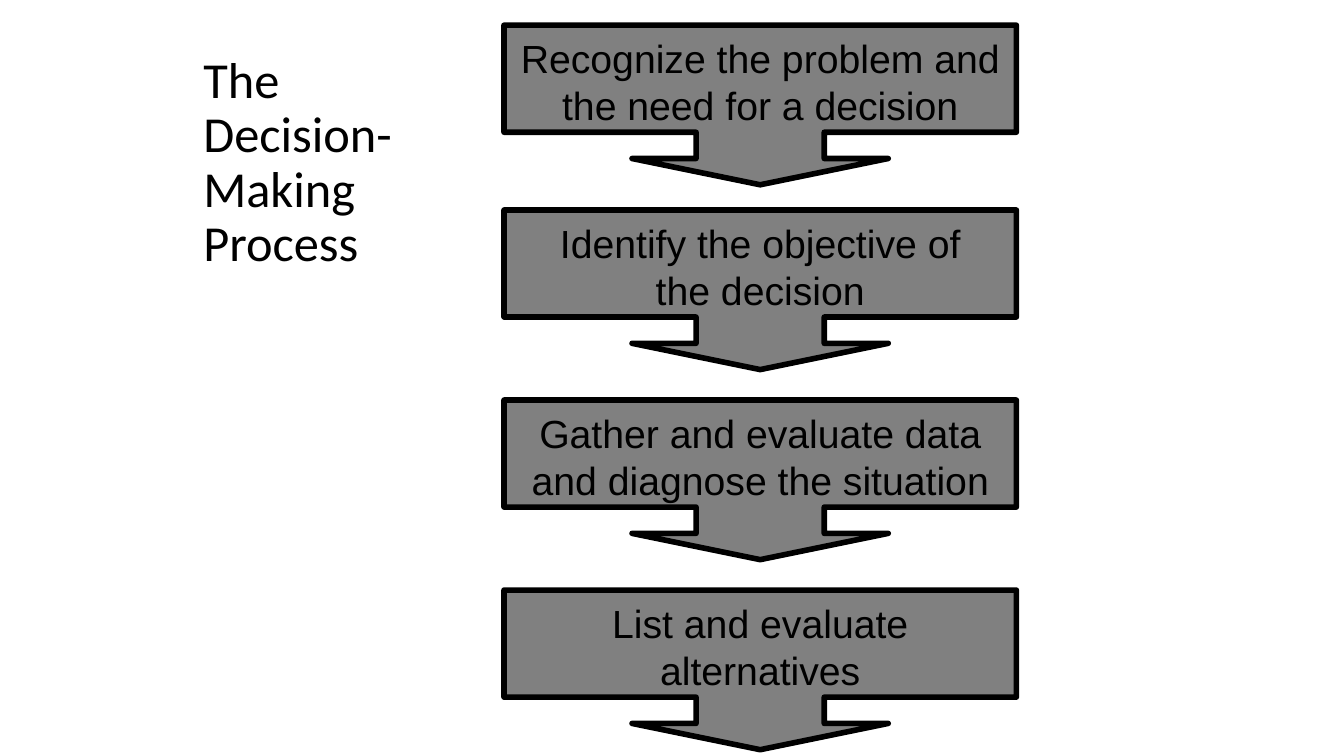
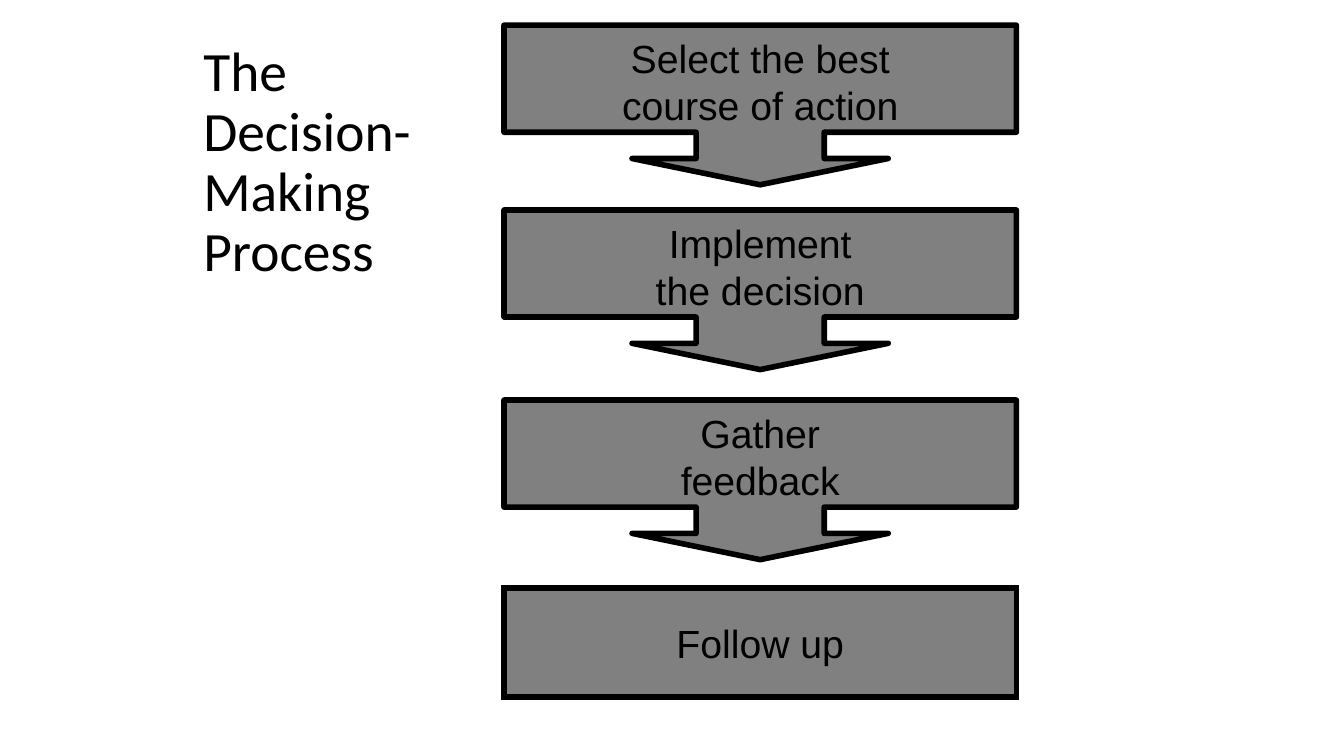
import dataclasses

import lxml.etree
import pptx
import pptx.dml.color
import pptx.enum.shapes
import pptx.enum.text
import pptx.oxml.ns
import pptx.util

EMU_PER_PX = 9525


@dataclasses.dataclass(frozen=True)
class Theme:
    ink: pptx.dml.color.RGBColor = pptx.dml.color.RGBColor(0x00, 0x00, 0x00)
    step_fill: pptx.dml.color.RGBColor = pptx.dml.color.RGBColor(0x80, 0x80, 0x80)
    title_font: str = "Calibri"
    step_font: str = "Arial"
    step_size: float = 28
    outline: float = 4


THEME = Theme()

TITLE = "The\vDecision-\vMaking\vProcess"
STEP_LEFT = 480
STEP_WIDTH = 488
CALLOUT_TOPS = (24, 200, 381, 562)
CALLOUT_HEIGHT = 152
BOX_HEIGHT = 102
SHAFT_WIDTH = 122
HEAD_WIDTH = 244
HEAD_LENGTH = 25
FINAL_TOP = 560
FINAL_HEIGHT = 104

FIRST_STEPS = (
    "Recognize the problem and\nthe need for a decision",
    "Identify the objective of\nthe decision",
    "Gather and evaluate data\nand diagnose the situation",
    "List and evaluate\nalternatives",
)
LATER_STEPS = (
    "Select the best\ncourse of action",
    "Implement\nthe decision",
    "Gather\nfeedback",
)
FINAL_STEP = "Follow up"


def px(length):
    return pptx.util.Emu(length * EMU_PER_PX)


def style_text(frame, font_name, size, alignment):
    frame.vertical_anchor = pptx.enum.text.MSO_ANCHOR.MIDDLE
    for paragraph in frame.paragraphs:
        paragraph.alignment = alignment
        for run in paragraph.runs:
            run.font.name = font_name
            run.font.size = pptx.util.Pt(size)
            run.font.color.rgb = THEME.ink


def add_titled_slide(deck, title_size):
    slide = deck.slides.add_slide(deck.slide_layouts[5])
    title = slide.shapes.title
    title.left, title.top, title.width, title.height = map(px, (184, 96, 816, 120))
    frame = title.text_frame
    frame.text = TITLE
    frame.word_wrap = True
    frame.auto_size = pptx.enum.text.MSO_AUTO_SIZE.NONE
    style_text(frame, THEME.title_font, title_size, pptx.enum.text.PP_ALIGN.LEFT)
    frame.paragraphs[0].line_spacing = 0.9
    return slide


def add_step(slide, preset, top, height, label):
    step = slide.shapes.add_shape(
        preset, px(STEP_LEFT), px(top), px(STEP_WIDTH), px(height)
    )
    step.shadow.inherit = False
    step.fill.solid()
    step.fill.fore_color.rgb = THEME.step_fill
    step.line.color.rgb = THEME.ink
    step.line.width = pptx.util.Pt(THEME.outline)
    frame = step.text_frame
    frame.text = label
    frame.word_wrap = True
    style_text(frame, THEME.step_font, THEME.step_size, pptx.enum.text.PP_ALIGN.CENTER)
    return step


def add_callouts(slide, labels):
    proportions = (SHAFT_WIDTH, HEAD_WIDTH / 2, HEAD_LENGTH, BOX_HEIGHT)
    for top, label in zip(CALLOUT_TOPS, labels):
        callout = add_step(
            slide,
            pptx.enum.shapes.MSO_SHAPE.DOWN_ARROW_CALLOUT,
            top,
            CALLOUT_HEIGHT,
            label,
        )
        callout.text_frame.margin_top = px(10)
        for index, length in enumerate(proportions):
            callout.adjustments[index] = length / CALLOUT_HEIGHT


def add_final_step(slide, label):
    final = add_step(
        slide, pptx.enum.shapes.MSO_SHAPE.RECTANGLE, FINAL_TOP, FINAL_HEIGHT, label
    )
    outline = final.element.spPr.find(pptx.oxml.ns.qn("a:ln"))
    lxml.etree.SubElement(outline, pptx.oxml.ns.qn("a:miter"), lim="800000")


def main():
    deck = pptx.Presentation()
    deck.slide_width = px(1280)
    deck.slide_height = px(720)

    add_callouts(add_titled_slide(deck, 36), FIRST_STEPS)

    closing = add_titled_slide(deck, 39.6)
    add_callouts(closing, LATER_STEPS)
    add_final_step(closing, FINAL_STEP)

    deck.save("out.pptx")


if __name__ == "__main__":
    main()
